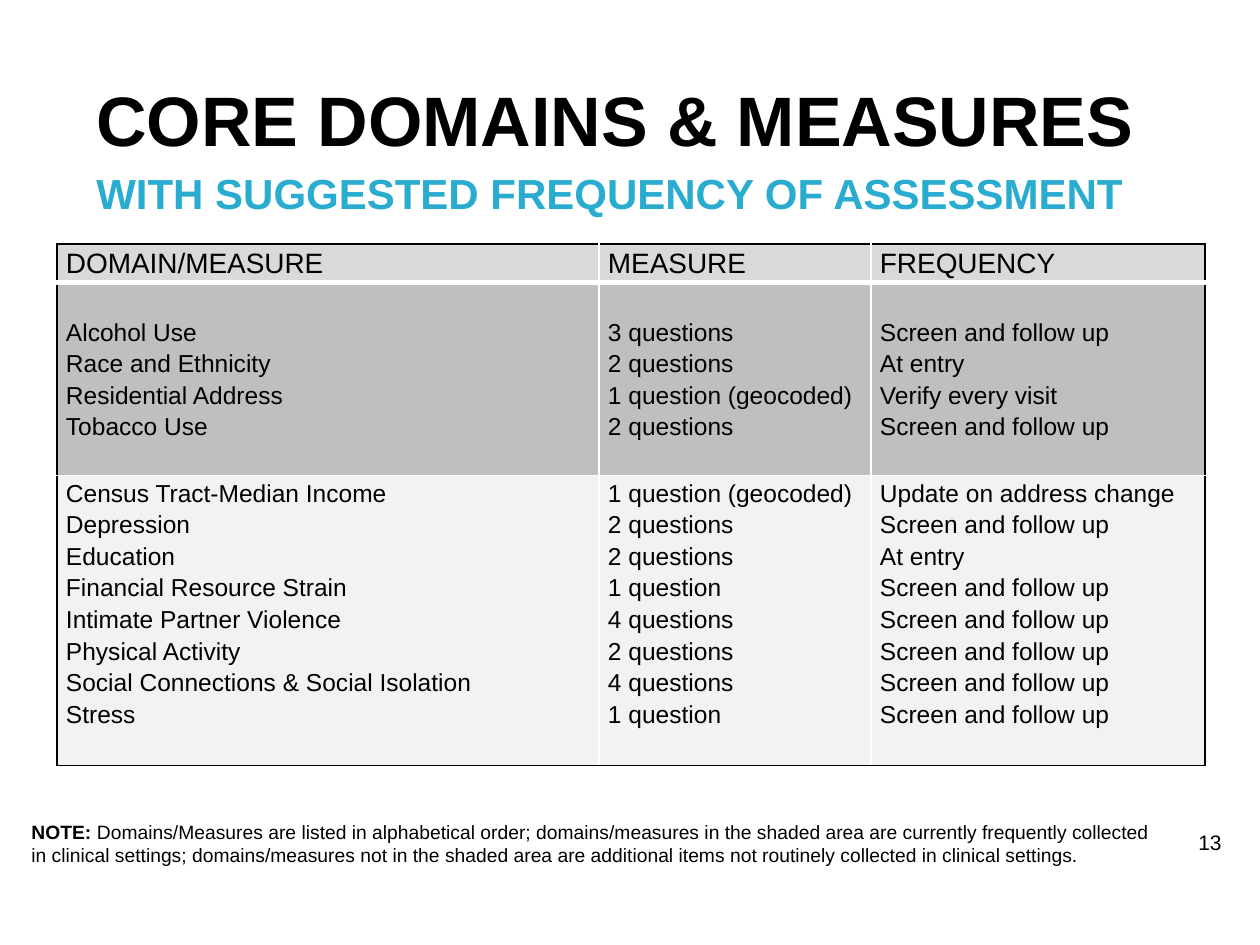
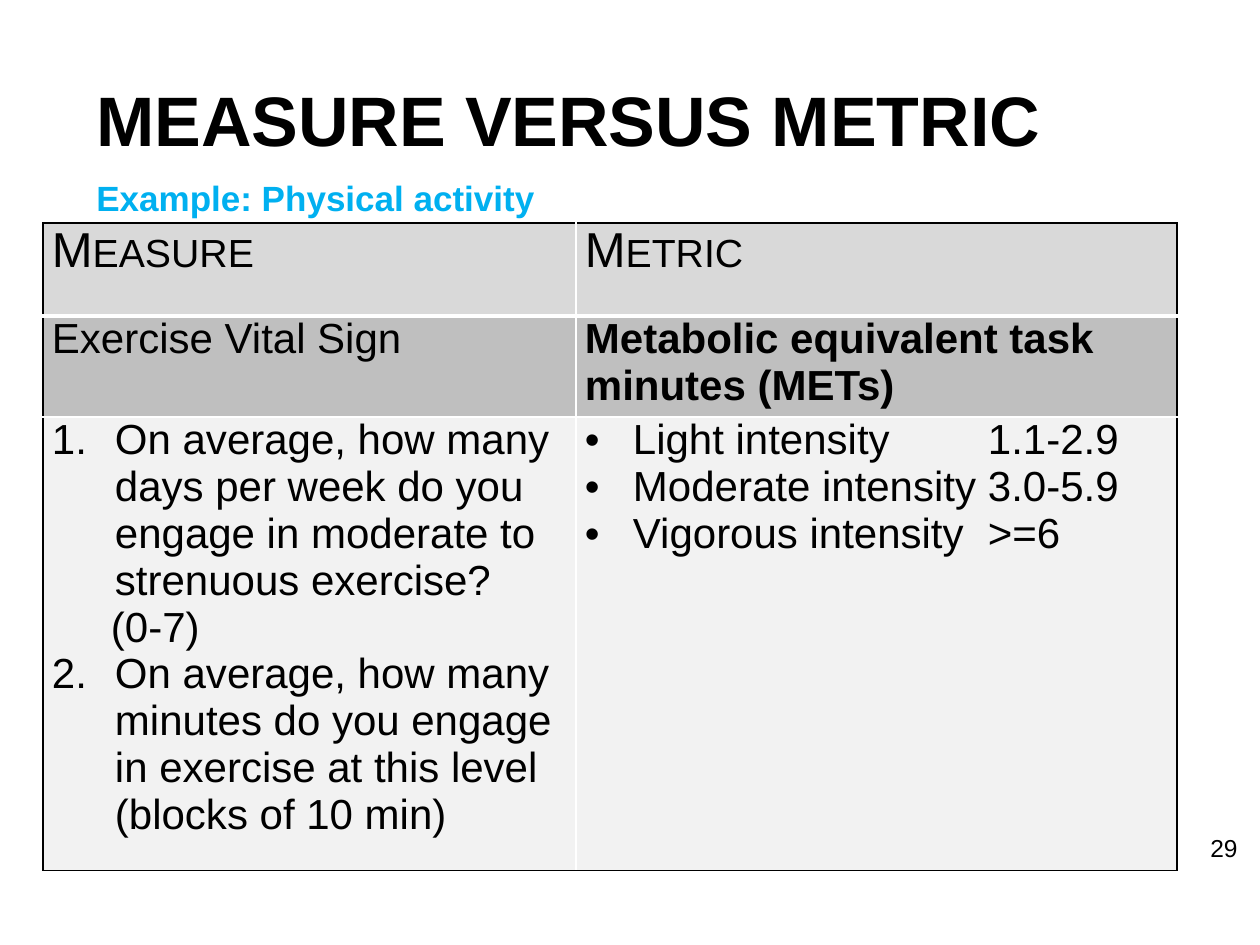
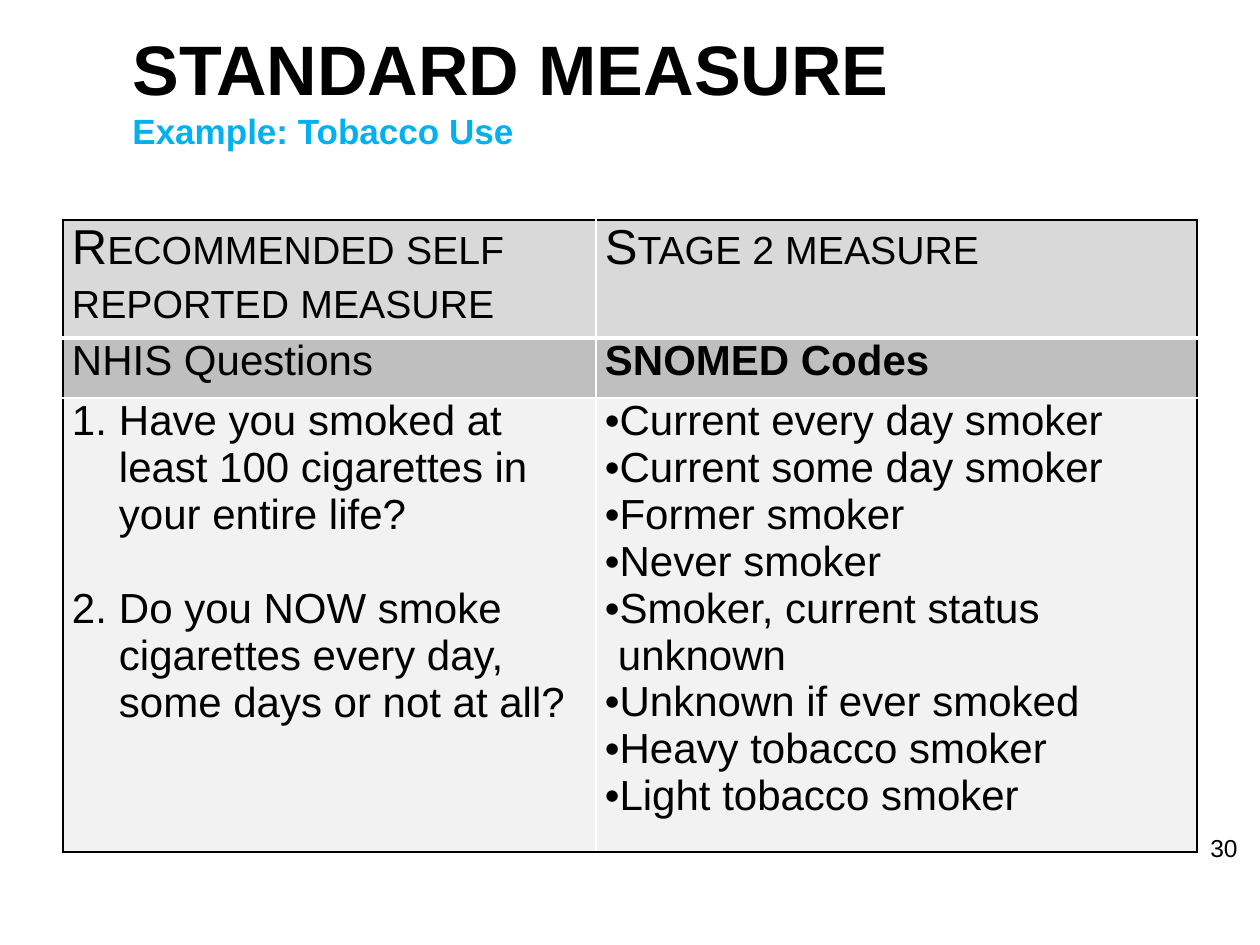
from dataclasses import dataclass

from lxml.etree import SubElement
from pptx import Presentation
from pptx.dml.color import RGBColor as Rgb
from pptx.enum.text import MSO_ANCHOR as Anchor
from pptx.oxml.ns import qn
from pptx.util import Emu, Pt

SCALE = 914400 / 126
FONT = "Arial"
COLORS = {
    "ink": "000000",
    "rule": "FFFFFF",
    "teal": "29ACD0",
    "sky": "00B0F0",
    "header": "D9D9D9",
    "shaded": "BFBFBF",
    "plain": "F2F2F2",
}
BANDS = ("header", "shaded", "plain")
EXAMPLE_COLUMNS = (533, 601)
TITLE_BOX = (84, 54, 1131, 213)
EXAMPLE_PAGE_BOX = (1198, 827, 53, 43)


@dataclass
class Entry:
    """One paragraph of a table cell, with its list marker and indents in px."""

    text: str
    bullet: str = ""
    number: int = 0
    margin: int = 0
    hang: int = 0
    gap: int = 0
    tab: int = 0
    bold: bool = False


def px(length):
    """Turn px into EMU."""
    return Emu(round(length * SCALE))


def style(font, size, color="ink", bold=False):
    """Set face, size, colour and weight of a font."""
    font.name, font.size, font.bold = FONT, Pt(size), bold
    font.color.rgb = Rgb.from_string(COLORS[color])


def add_text_box(slide, box, wrap=True):
    """Add an empty text box and return its text frame."""
    frame = slide.shapes.add_textbox(*map(px, box)).text_frame
    frame.word_wrap = wrap
    return frame


def add_title(slide, heading, subtitle, size, color, box=TITLE_BOX, anchor=Anchor.MIDDLE, leading=Pt(33)):
    """Add a heading with a coloured subtitle on the next line."""
    frame = add_text_box(slide, box)
    frame.vertical_anchor = anchor
    title = frame.paragraphs[0]
    title.line_spacing = leading
    top = title.add_run()
    top.text = heading
    style(top.font, 40, bold=True)
    title.add_line_break()
    below = title.add_run()
    below.text = subtitle
    style(below.font, size, color, True)


def add_page_number(slide, number, size, box):
    """Add the page number."""
    page = add_text_box(slide, box, wrap=False).paragraphs[0]
    page.text = str(number)
    style(page.font, size)


def add_note(slide, label, text, box):
    """Add a footnote with a bold label."""
    note = add_text_box(slide, box).paragraphs[0]
    for words, bold in ((label, True), (text, False)):
        run = note.add_run()
        run.text = words
        style(run.font, 11, bold=bold)


def set_marker(paragraph, entry):
    """Set the indents, list marker and tab stop of a paragraph."""
    props = paragraph._p.get_or_add_pPr()
    props.set("marL", str(px(entry.margin)))
    props.set("indent", str(-px(entry.hang)))
    if entry.bullet:
        SubElement(props, qn("a:buFont"), typeface=FONT)
        SubElement(props, qn("a:buChar"), char=entry.bullet)
    elif entry.number:
        SubElement(props, qn("a:buAutoNum"), type="arabicPeriod", startAt=str(entry.number))
    if entry.tab:
        stops = SubElement(props, qn("a:tabLst"))
        SubElement(stops, qn("a:tab"), pos=str(px(entry.tab)), algn="l")


def set_borders(cell, row, column, rows, columns):
    """Rule the outside of the table in black and the inside in white."""
    edges = {
        "L": column == 0,
        "R": column == columns - 1,
        "T": row == 0,
        "B": row == rows - 1,
    }
    props = cell._tc.get_or_add_tcPr()
    for side, outer in edges.items():
        width = Pt(3) if row == 0 and side == "B" else Pt(1)
        line = SubElement(props, qn(f"a:ln{side}"), w=str(width))
        fill = SubElement(line, qn("a:solidFill"))
        SubElement(fill, qn("a:srgbClr"), val=COLORS["ink" if outer else "rule"])


def fill_cell(cell, entries, size, leading, caps):
    """Write the entries of a cell, one to a paragraph."""
    frame = cell.text_frame
    for index, entry in enumerate(entries):
        paragraph = frame.add_paragraph() if index else frame.paragraphs[0]
        paragraph.text = entry.text
        set_marker(paragraph, entry)
        paragraph.line_spacing = leading
        if entry.gap:
            paragraph.space_before = px(entry.gap)
        style(paragraph.font, size, bold=entry.bold)
        if caps:
            paragraph._p.pPr.find(qn("a:defRPr")).set("cap", "small")


def add_banded_table(slide, corner, widths, heights, content, sizes, leading=None, caps=False, shaded_top=0):
    """Add a table with a header, a shaded and a plain band."""
    shape = slide.shapes.add_table(len(heights), len(widths), *map(px, (*corner, sum(widths), sum(heights))))
    table = shape.table
    table.first_row = table.horz_banding = False
    for column, width in zip(table.columns, widths):
        column.width = px(width)
    for r, (height, band, size) in enumerate(zip(heights, BANDS, sizes)):
        table.rows[r].height = px(height)
        for c, entries in enumerate(content[r]):
            cell = table.cell(r, c)
            cell.margin_left = cell.margin_right = px(9)
            cell.margin_top = px(shaded_top if band == "shaded" else 0)
            cell.margin_bottom = 0
            set_borders(cell, r, c, len(heights), len(widths))
            cell.fill.solid()
            cell.fill.fore_color.rgb = Rgb.from_string(COLORS[band])
            fill_cell(cell, entries, size, leading, caps and r == 0)


def add_example_table(slide, corner, heights, content):
    """Add a two-column table of questions and their coding."""
    add_banded_table(slide, corner, EXAMPLE_COLUMNS, heights, content, (28, 24, 24), caps=True)


def by_column(rows):
    """Turn rows of words into one list of entries for each column."""
    return [[Entry(words) for words in column] for column in zip(*rows)]


def build_domains(slide):
    """Build the list of core domains."""
    follow_up = "Screen and follow up"
    header = [("DOMAIN/MEASURE", "MEASURE", "FREQUENCY")]
    collected = [
        ("Alcohol Use", "3 questions", follow_up),
        ("Race and Ethnicity", "2 questions", "At entry"),
        ("Residential Address", "1 question (geocoded)", "Verify every visit"),
        ("Tobacco Use", "2 questions", follow_up),
    ]
    additional = [
        ("Census Tract-Median Income", "1 question (geocoded)", "Update on address change"),
        ("Depression", "2 questions", follow_up),
        ("Education", "2 questions", "At entry"),
        ("Financial Resource Strain", "1 question", follow_up),
        ("Intimate Partner Violence", "4 questions", follow_up),
        ("Physical Activity", "2 questions", follow_up),
        ("Social Connections & Social Isolation", "4 questions", follow_up),
        ("Stress", "1 question", follow_up),
    ]
    add_title(slide, "CORE DOMAINS & MEASURES", "WITH SUGGESTED FREQUENCY OF ASSESSMENT", 24, "teal")
    content = [by_column(band) for band in (header, collected, additional)]
    add_banded_table(
        slide, (57, 244), (542, 272, 334), (37, 193, 290), content, (16, 14, 14), leading=1.15, shaded_top=32
    )
    add_note(
        slide,
        "NOTE:",
        " Domains/Measures are listed in alphabetical order; domains/measures in the shaded area are "
        "currently frequently collected in clinical settings; domains/measures not in the shaded area "
        "are additional items not routinely collected in clinical settings.",
        (19, 814, 1163, 59),
    )
    add_page_number(slide, 13, 12, (1186, 823, 49, 38))


def build_activity(slide):
    """Build the physical activity example."""
    days = "On average, how many days per week do you engage in moderate to strenuous exercise?"
    minutes = "On average, how many minutes do you engage in exercise at this level (blocks of 10 min)"
    questions = [
        Entry(days, number=1, margin=63, hang=63),
        Entry("(0-7)", margin=59),
        Entry(minutes, number=2, margin=63, hang=63),
    ]
    levels = ("Light intensity\t1.1-2.9", "Moderate intensity\t3.0-5.9", "Vigorous intensity\t>=6")
    intensities = [Entry(level, bullet="•", margin=48, hang=48, tab=403) for level in levels]
    add_title(slide, "MEASURE VERSUS METRIC", "Example: Physical activity", 20, "sky")
    content = [
        [[Entry("Measure")], [Entry("Metric")]],
        [[Entry("Exercise Vital Sign")], [Entry("Metabolic equivalent task minutes (METs)", bold=True)]],
        [questions, intensities],
    ]
    add_example_table(slide, (43, 223), (93, 93, 422), content)
    add_page_number(slide, 29, 14, EXAMPLE_PAGE_BOX)


def build_tobacco(slide):
    """Build the tobacco use example."""
    questions = [
        Entry("Have you smoked at least 100 cigarettes in your entire life?", number=1, margin=47, hang=47),
        Entry("Do you NOW smoke cigarettes every day, some days or not at all?", number=2, margin=47, hang=47, gap=47),
    ]
    statuses = (
        "Current every day smoker",
        "Current some day smoker",
        "Former smoker",
        "Never smoker",
        "Smoker, current status unknown",
        "Unknown if ever smoked",
        "Heavy tobacco smoker",
        "Light tobacco smoker",
    )
    codes = [Entry(status, bullet="•", margin=13, hang=13) for status in statuses]
    content = [
        [[Entry("Recommended self reported measure")], [Entry("Stage 2 measure")]],
        [[Entry("NHIS Questions")], [Entry("SNOMED Codes", bold=True)]],
        [questions, codes],
    ]
    add_page_number(slide, 30, 14, EXAMPLE_PAGE_BOX)
    add_example_table(slide, (63, 220), (118, 60, 454), content)
    add_title(
        slide, "STANDARD MEASURE", "Example: Tobacco Use", 20, "sky", (120, 19, 1016, 140), Anchor.TOP, leading=None
    )


def main():
    """Build and save the three slides."""
    deck = Presentation()
    deck.slide_width, deck.slide_height = px(1260), px(945)
    for build in (build_domains, build_activity, build_tobacco):
        build(deck.slides.add_slide(deck.slide_layouts[6]))
    deck.save("out.pptx")


if __name__ == "__main__":
    main()
